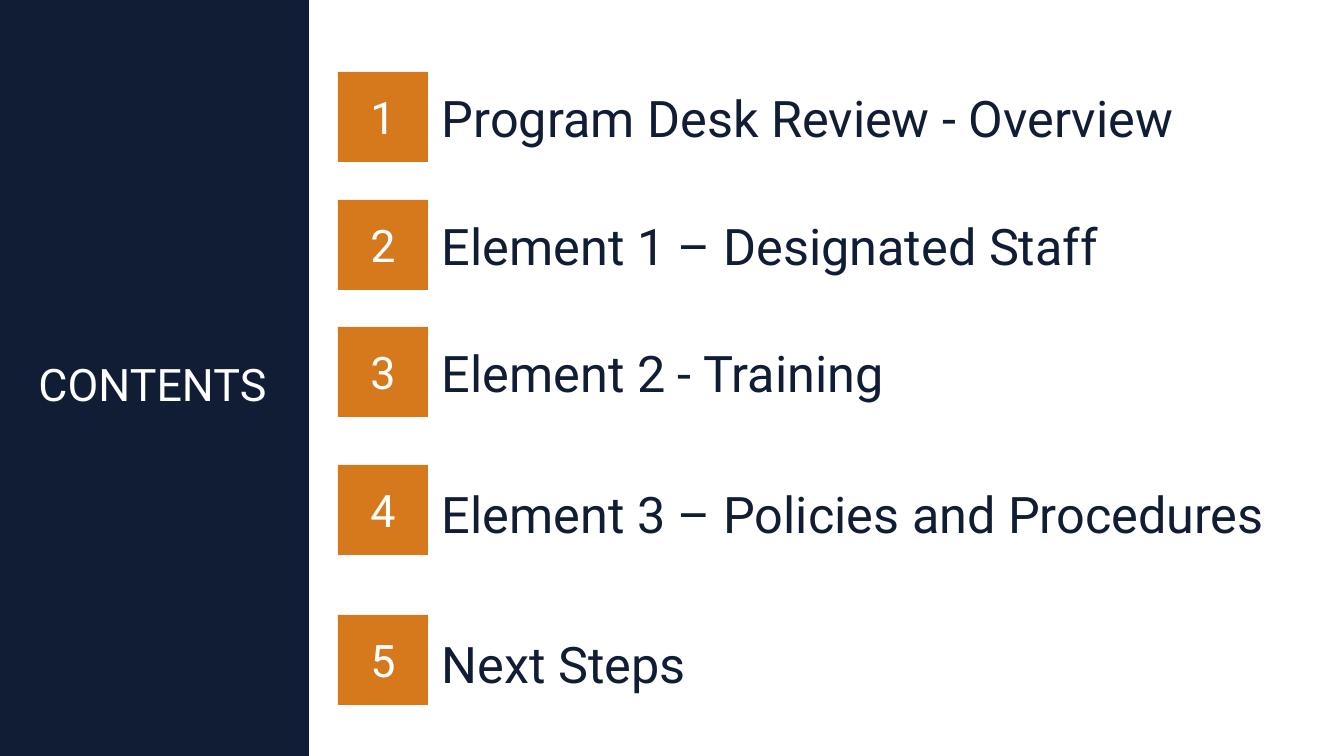
from pptx import Presentation
from pptx.dml.color import RGBColor
from pptx.enum.shapes import MSO_SHAPE as Shape
from pptx.enum.text import MSO_ANCHOR as Anchor, MSO_AUTO_SIZE as AutoSize, PP_ALIGN as Align
from pptx.util import Emu, Pt

COLORS = {"navy": "101D35", "orange": "D6791C", "white": "FFFFFF"}
FONT = "Roboto"


def px(*lengths):
    return [Emu(round(length * 914400 / 100.8)) for length in lengths]


def write(box, text, size, color, align, anchor):
    frame = box.text_frame
    frame.word_wrap = True
    frame.auto_size = AutoSize.NONE
    frame.vertical_anchor = anchor
    para = frame.paragraphs[0]
    para.alignment = align
    para.line_spacing = 1.0
    para.space_before = Pt(0)
    span = para.add_run()
    span.text = text
    span.font.name = FONT
    span.font.size = Pt(size)
    span.font.color.rgb = RGBColor.from_string(COLORS[color])


deck = Presentation()
deck.slide_width, deck.slide_height = px(1344, 756)
page = deck.slides.add_slide(deck.slide_layouts[5])

# Title on the side panel
title = page.shapes.title
title.left, title.top, title.width, title.height = px(0, 352, 305, 65)
write(title, "CONTENTS", 32, "white", Align.CENTER, Anchor.TOP)

# Side panel and number squares
squares = [(0, 0, 309, 756, "navy")]
items = [
    # text, top of the square, top inset of the label
    ("Program Desk Review - Overview", 72, 0),
    ("Element 1 – Designated Staff", 200, 0),
    ("Element 2 - Training", 327, 0),
    ("Element 3 – Policies and Procedures", 465, 6),
    ("Next Steps", 615, 6),
]
squares += [(338, top, 90, 90, "orange") for _, top, _ in items]
for number, (left, top, width, height, color) in enumerate(squares):
    square = page.shapes.add_shape(Shape.RECTANGLE, *px(left, top, width, height))
    square.shadow.inherit = False
    square.fill.solid()
    square.fill.fore_color.rgb = RGBColor.from_string(COLORS[color])
    square.line.fill.background()
    if number:
        write(square, str(number), 32, "white", Align.CENTER, Anchor.MIDDLE)
    else:
        # The panel lies behind the title
        title._element.addprevious(square._element)

# Labels
for text, top, inset in items:
    label = page.shapes.add_textbox(*px(432, top + inset, 880, 90 - inset))
    write(label, text, 36, "navy", Align.LEFT, Anchor.MIDDLE)

deck.save("out.pptx")
